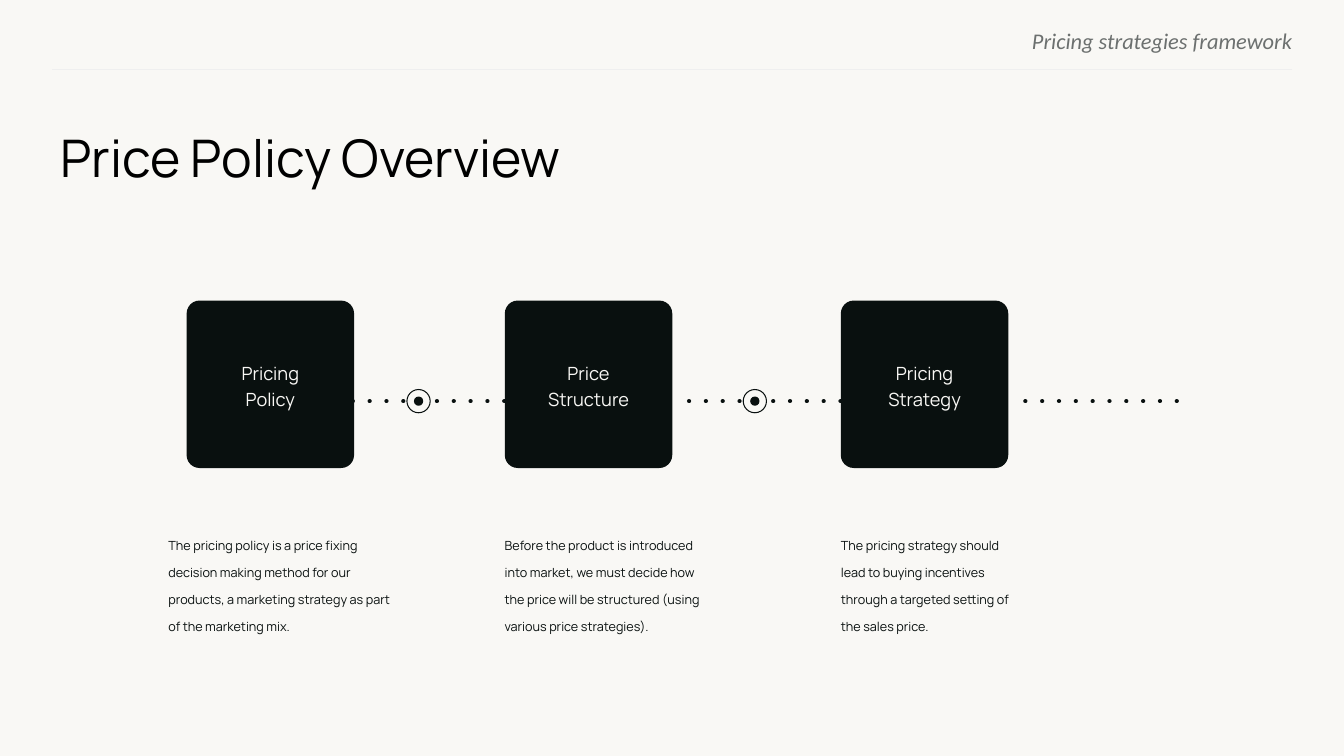
"""Build the Price Policy Overview slide."""
from pptx import Presentation
from pptx.dml.color import RGBColor
from pptx.enum.dml import MSO_LINE
from pptx.enum.shapes import MSO_CONNECTOR, MSO_SHAPE
from pptx.enum.text import MSO_ANCHOR, PP_ALIGN
from pptx.oxml.ns import qn
from pptx.util import Pt
from lxml.etree import SubElement

INK = RGBColor(0x09, 0x10, 0x0F)
PAPER = RGBColor(0xF9, 0xF8, 0xF5)
GREY = RGBColor(0x6C, 0x70, 0x6F)
RULE = RGBColor(0xEF, 0xEF, 0xEF)
BLACK = RGBColor(0x00, 0x00, 0x00)

PITCH = 240.2
LINE_Y = 286.55
BOX_SIZE = 119.6
STEPS = [
    ("Pricing\vPolicy", 133.3, 160,
     "The pricing policy is a price fixing decision making method for our "
     "products, a marketing strategy as part of the marketing mix."),
    ("Price\vStructure", 360.6, 148.3,
     "Before the product is introduced into market, we must decide how the "
     "price will be structured (using various price strategies)."),
    ("Pricing\vStrategy", 600.6, 123.3,
     "The pricing strategy should lead to buying incentives through a targeted "
     "setting of the sales price."),
]


def write(shape, text, font_name, size, color, margin=0):
    frame = shape.text_frame
    frame.word_wrap = True
    frame.margin_left = frame.margin_right = Pt(margin)
    frame.margin_top = frame.margin_bottom = Pt(margin)
    frame.text = text
    paragraph = frame.paragraphs[0]
    paragraph.font.name = font_name
    paragraph.font.size = Pt(size)
    paragraph.font.color.rgb = color
    return paragraph


def draw_line(left, right, y, color, width):
    connector = slide.shapes.add_connector(
        MSO_CONNECTOR.STRAIGHT, Pt(right), Pt(y), Pt(left), Pt(y))
    connector.line.color.rgb = color
    connector.line.width = Pt(width)
    SubElement(connector._element.spPr, qn("a:effectLst"))
    return connector


presentation = Presentation()
presentation.slide_width = Pt(960)
presentation.slide_height = Pt(540)
slide = presentation.slides.add_slide(presentation.slide_layouts[5])
slide.background.fill.solid()
slide.background.fill.fore_color.rgb = PAPER

header = slide.shapes.add_textbox(Pt(553), Pt(19.5), Pt(370), Pt(17.3))
paragraph = write(header, "Pricing strategies framework", "Calibri", 16, GREY)
paragraph.alignment = PP_ALIGN.RIGHT
paragraph.font.italic = True
draw_line(37.4, 923, 49.6, RULE, 0.75)

title = slide.shapes.title
title.left, title.top, title.width, title.height = Pt(43.2), Pt(87.8), Pt(885.6), Pt(49)
paragraph = write(title, "Price Policy Overview", "Manrope", 37, BLACK)
paragraph.alignment = PP_ALIGN.LEFT
paragraph.space_after = Pt(13)
title.text_frame.vertical_anchor = MSO_ANCHOR.MIDDLE

for index in range(len(STEPS)):
    left = 240.4 + index * PITCH
    dotted = draw_line(left, left + 119.8, LINE_Y, INK, 3)
    dotted.line.dash_style = MSO_LINE.SQUARE_DOT
    outline = dotted.line._get_or_add_ln()
    outline.set("cap", "rnd")
    outline.find(qn("a:prstDash")).set("val", "dot")
    if index == len(STEPS) - 1:
        continue
    center = 299 + index * PITCH
    for diameter, fill, width in ((16.6, PAPER, 0.75), (5.6, INK, 1)):
        marker = slide.shapes.add_shape(
            MSO_SHAPE.OVAL, Pt(center - diameter / 2), Pt(LINE_Y - diameter / 2),
            Pt(diameter), Pt(diameter))
        marker.shadow.inherit = False
        marker.fill.solid()
        marker.fill.fore_color.rgb = fill
        marker.line.color.rgb = INK
        marker.line.width = Pt(width)
        if fill == PAPER:
            color = marker._element.spPr.find(qn("a:solidFill")).find(qn("a:srgbClr"))
            SubElement(color, qn("a:alpha")).set("val", "20000")

for index, (name, box_left, width, description) in enumerate(STEPS):
    box = slide.shapes.add_shape(
        MSO_SHAPE.ROUNDED_RECTANGLE, Pt(box_left), Pt(214.7), Pt(BOX_SIZE), Pt(BOX_SIZE))
    box.adjustments[0] = 0.077
    box.shadow.inherit = False
    box.fill.solid()
    box.fill.fore_color.rgb = INK
    box.line.fill.background()
    paragraph = write(box, name, "Manrope", 13, PAPER, 7.2)
    paragraph.alignment = PP_ALIGN.CENTER
    paragraph.line_spacing = 1.2
    box.text_frame.vertical_anchor = MSO_ANCHOR.MIDDLE

    caption = slide.shapes.add_textbox(
        Pt(120.3 + index * PITCH), Pt(375.8), Pt(width), Pt(69.1))
    write(caption, description, "Manrope", 9, INK).line_spacing = 1.78

presentation.save("out.pptx")
